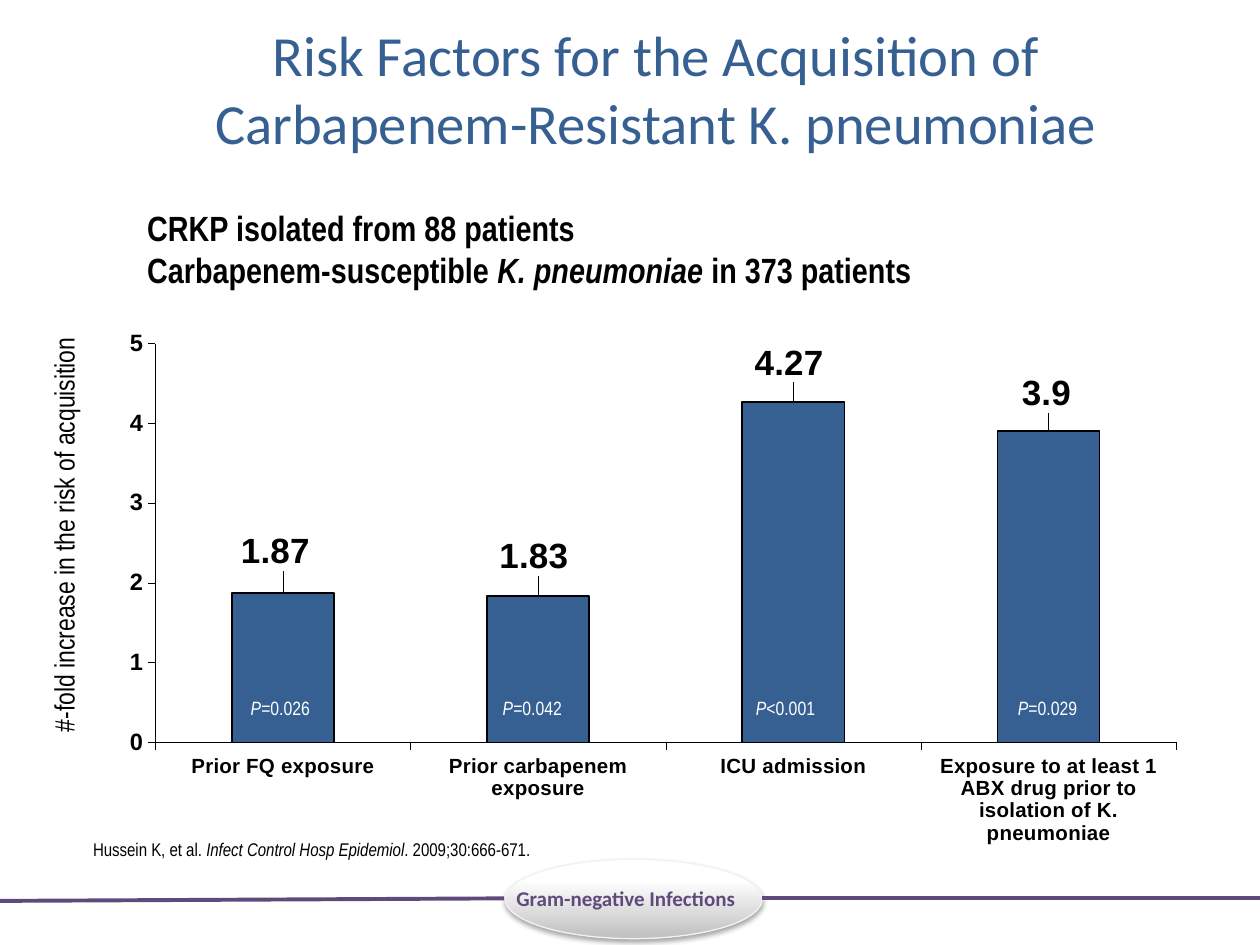
from lxml import etree
from pptx import Presentation
from pptx.chart.data import CategoryChartData
from pptx.dml.color import RGBColor
from pptx.enum.chart import XL_CHART_TYPE, XL_LABEL_POSITION, XL_TICK_MARK
from pptx.enum.shapes import MSO_CONNECTOR, MSO_SHAPE
from pptx.enum.text import MSO_ANCHOR, PP_ALIGN
from pptx.oxml import parse_xml
from pptx.oxml.ns import nsdecls, qn
from pptx.util import Inches, Pt

BLUE, PURPLE, BLACK, WHITE = "376092", "604A7B", "000000", "FFFFFF"
NARROW = "Arial Narrow"


def color(value):
    return RGBColor.from_string(value)


def style_font(font, size, name="Arial", fill=BLACK, bold=True, italic=False):
    font.size = Pt(size)
    font.name = name
    font.bold = bold
    font.italic = italic
    font.color.rgb = color(fill)


def add_text(slide, box, *lines, size, name=NARROW, fill=BLACK, bold=False,
             align=PP_ALIGN.LEFT, anchor=MSO_ANCHOR.TOP, rotation=0):
    sp = slide.shapes.add_textbox(*map(Inches, box))
    sp.rotation = rotation
    tf = sp.text_frame
    tf.word_wrap = True
    tf.vertical_anchor = anchor
    p = tf.paragraphs[0]
    p.alignment = align
    for i, line in enumerate(lines):
        if i:
            p.add_line_break()
        for text, italic in line:
            r = p.add_run()
            r.text = text
            style_font(r.font, size, name, fill, bold, italic)
    return sp


def add_rule(slide, x1, y1, x2, y2):
    ln = slide.shapes.add_connector(MSO_CONNECTOR.STRAIGHT, *map(Inches, (x1, y1, x2, y2)))
    ln.line.color.rgb = color(PURPLE)
    ln.line.width = Pt(2.25)
    etree.SubElement(ln._element.spPr, qn("a:effectLst"))


def add_badge(slide, box):
    sp = slide.shapes.add_shape(MSO_SHAPE.OVAL, *map(Inches, box))
    sp.fill.gradient()
    sp.fill.gradient_angle = 270
    for stop, (pos, value) in zip(sp.fill.gradient_stops, ((0.26, WHITE), (1, "BFBFBF"))):
        stop.position = pos
        stop.color.rgb = color(value)
    sp.line.color.rgb = color("F2F2F2")
    sp.line.width = Pt(0.75)
    sp._element.spPr.append(parse_xml(
        f'<a:effectLst {nsdecls("a")}><a:outerShdw blurRad="{Pt(3.1)}" dist="{Pt(1.8)}" '
        'dir="5400000" rotWithShape="0"><a:srgbClr val="000000"><a:alpha val="35000"/>'
        '</a:srgbClr></a:outerShdw></a:effectLst>'))


def manual_layout(x, y, extra=""):
    return parse_xml(
        f'<c:layout {nsdecls("c")}><c:manualLayout>{extra}'
        f'<c:x val="{x}"/><c:y val="{y}"/></c:manualLayout></c:layout>')


def set_plot_area(chart, x, y, w, h):
    layout = manual_layout(x, y, '<c:layoutTarget val="inner"/>'
                           '<c:xMode val="edge"/><c:yMode val="edge"/>')
    for tag, value in (("c:w", w), ("c:h", h)):
        etree.SubElement(layout[0], qn(tag)).set("val", str(value))
    area = chart._chartSpace.chart.plotArea
    for old in area.findall(qn("c:layout")):
        area.remove(old)
    area.insert(0, layout)


def style_axis(axis, size):
    axis.has_major_gridlines = False
    axis.major_tick_mark = XL_TICK_MARK.OUTSIDE
    axis.minor_tick_mark = XL_TICK_MARK.NONE
    axis.format.line.color.rgb = color(BLACK)
    axis.format.line.width = Pt(0.25)
    style_font(axis.tick_labels.font, size)


def add_risk_chart(slide, box):
    data = CategoryChartData()
    data.categories = ["Prior FQ exposure", "Prior carbapenem exposure", "ICU admission",
                       "Exposure to at least 1 ABX drug prior to isolation of K. pneumoniae"]
    data.add_series("Series 1", (1.87, 1.83, 4.27, 3.9))
    chart = slide.shapes.add_chart(
        XL_CHART_TYPE.COLUMN_CLUSTERED, *map(Inches, box), data).chart
    chart.has_legend = False
    chart.has_title = False
    style_font(chart.font, 17.5)
    style_axis(chart.category_axis, 11.7)
    axis = chart.value_axis
    style_axis(axis, 13.5)
    axis.minimum_scale, axis.maximum_scale, axis.major_unit = 0, 5, 1
    set_plot_area(chart, 0.048, 0.065, 0.941, 0.718)

    plot = chart.plots[0]
    plot.gap_width = 150
    plot.vary_by_categories = False
    series = plot.series[0]
    series.format.fill.solid()
    series.format.fill.fore_color.rgb = color(BLUE)
    series.format.line.color.rgb = color(BLACK)
    series.format.line.width = Pt(1)
    offsets = ((-0.007, -0.03), (-0.004, -0.027), (-0.004, -0.025), (-0.002, -0.023))
    for i, _ in enumerate(offsets):
        label = series.points[i].data_label
        style_font(label.font, 20)
        label.position = XL_LABEL_POSITION.OUTSIDE_END
    for label, offset in zip(series._element.iter(qn("c:dLbl")), offsets):
        label.insert(1, manual_layout(*offset))


def main():
    prs = Presentation()
    prs.slide_width, prs.slide_height = Inches(10), Inches(7.5)
    slide = prs.slides.add_slide(prs.slide_layouts[6])

    add_badge(slide, (4.01, 6.82, 2.04, 0.63))
    add_rule(slide, 0, 7.15, 4, 7.13)
    add_rule(slide, 6.05, 7.13, 10, 7.13)
    add_text(slide, (4, 6.98, 2.05, 0.3), [("Gram-negative Infections", False)],
             size=12, name="Calibri", fill=PURPLE, bold=True)

    add_risk_chart(slide, (0.82, 2.44, 8.61, 4.41))
    for x, symbol, rest in ((1.89, "P=", "0.026"), (3.89, "P=", "0.042"),
                            (5.9, "P", "<0.001"), (7.98, "P", "=0.029")):
        add_text(slide, (x, 5.48, 1.36, 0.29), [(symbol, True), (rest, False)],
                 size=11, fill=WHITE)

    add_text(slide, (0.64, 6.6, 6.83, 0.28),
             [("Hussein K, et al. ", False), ("Infect Control Hosp Epidemiol", True),
              (". 2009;30:666-671.", False)], size=10.5)
    add_text(slide, (-1.29, 4.06, 3.59, 0.37),
             [("#-fold increase in the risk of acquisition", False)],
             size=16, align=PP_ALIGN.CENTER, rotation=270)
    add_text(slide, (1.07, 1.58, 7.49, 0.78),
             [("CRKP isolated from 88 patients", False)],
             [("Carbapenem-susceptible ", False), ("K. pneumoniae", True),
              (" in 373 patients", False)],
             size=20, bold=True, anchor=MSO_ANCHOR.MIDDLE)
    add_text(slide, (0.91, 0.07, 8.59, 1.25),
             [("Risk Factors for the Acquisition of Carbapenem-Resistant K. pneumoniae", False)],
             size=32.4, name="Calibri", fill=BLUE, align=PP_ALIGN.CENTER,
             anchor=MSO_ANCHOR.MIDDLE)
    prs.save("out.pptx")


if __name__ == "__main__":
    main()
